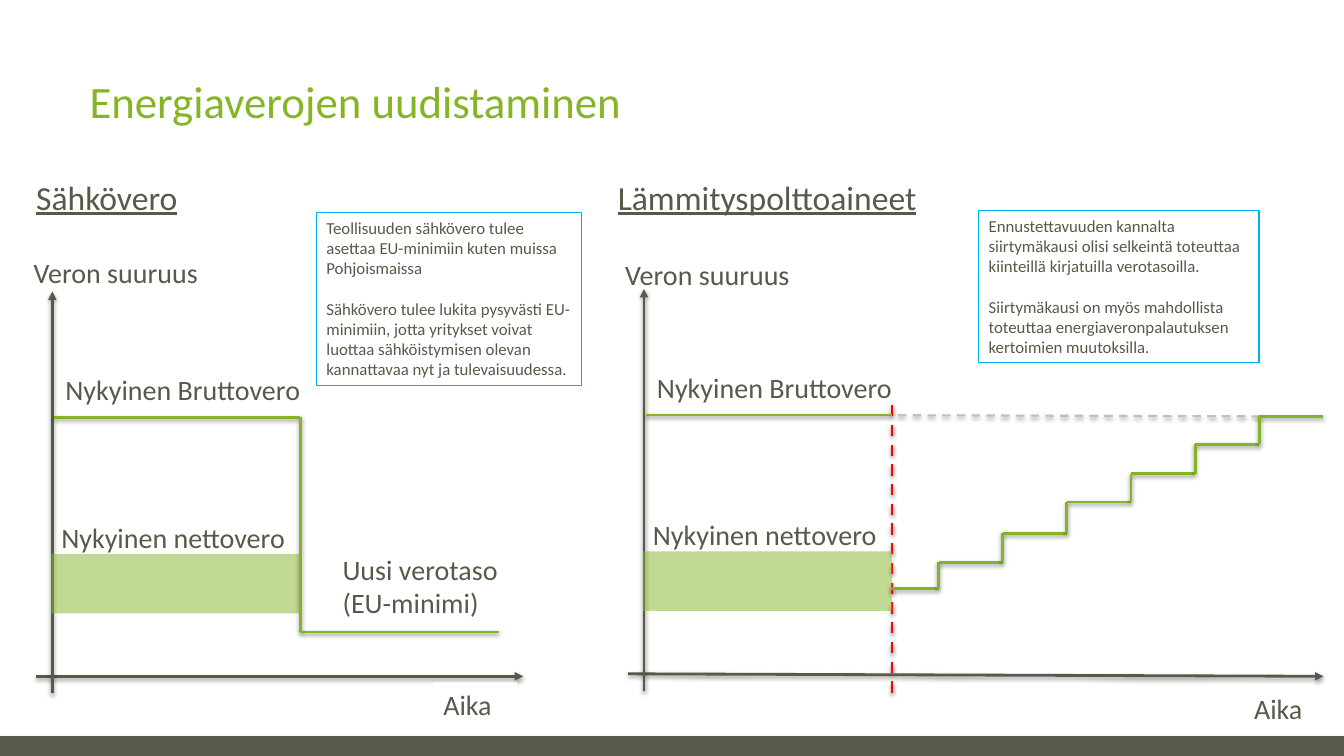
from dataclasses import dataclass

from lxml import etree
from pptx import Presentation
from pptx import slide as s
from pptx import util as u
from pptx.dml import color
from pptx.enum import dml, shapes, text
from pptx.oxml import ns


@dataclass(frozen=True)
class Theme:
    font: str = "Calibri"
    ink: str = "59594A"
    green: str = "85B526"
    red: str = "FF0000"
    blue: str = "00B0F0"
    grey: str = "C0C0B3"
    white: str = "FFFFFF"
    title: float = 32
    head: float = 24
    label: float = 20
    note: float = 12


T = Theme()


@dataclass(frozen=True)
class Line:
    x1: float
    y1: float
    x2: float
    y2: float
    tint: str = T.green
    width: float = 2
    dash: bool = False
    arrow: bool = False


@dataclass(frozen=True)
class Box:
    x: float
    y: float
    w: float
    h: float
    fill: str = ""
    edge: str = ""
    alpha: int = 100


@dataclass(frozen=True)
class Label:
    box: Box
    paras: tuple[str, ...]
    size: float = T.label
    tint: str = T.ink
    under: bool = False
    anchor: text.MSO_ANCHOR = text.MSO_ANCHOR.TOP
    pitch: float = 1.0


@dataclass(frozen=True)
class Panel:
    head: str
    head_x: float
    dx: float
    dy: float
    name_y: float
    end_x: float
    end_y: float


def rgb(tint: str) -> color.RGBColor:
    return color.RGBColor.from_string(tint)


def add_shade(props, alpha: int, dist: float) -> None:
    """Put a soft downward shadow on a shape."""
    tag = ns.qn("a:effectLst")
    effects = props.find(tag)
    if effects is None:
        effects = etree.SubElement(props, tag)
    shade = etree.SubElement(effects, ns.qn("a:outerShdw"), blurRad=str(u.Pt(3.1)),
                             dist=str(u.Pt(dist)), dir="5400000", rotWithShape="0")
    tint = etree.SubElement(shade, ns.qn("a:srgbClr"), val="000000")
    etree.SubElement(tint, ns.qn("a:alpha"), val=str(alpha * 1000))


def draw_line(page: s.Slide, item: Line) -> None:
    ends = [u.Pt(v) for v in (item.x1, item.y1, item.x2, item.y2)]
    link = page.shapes.add_connector(shapes.MSO_CONNECTOR.STRAIGHT, *ends)
    link.line.color.rgb = rgb(item.tint)
    link.line.width = u.Pt(item.width)
    if item.dash:
        link.line.dash_style = dml.MSO_LINE.DASH
    props = link._element.spPr
    if item.arrow:
        etree.SubElement(props.find(ns.qn("a:ln")), ns.qn("a:tailEnd"), type="triangle")
    add_shade(props, 38, 1.6)


def draw_box(page: s.Slide, box: Box):
    frame = [u.Pt(v) for v in (box.x, box.y, box.w, box.h)]
    shape = page.shapes.add_shape(shapes.MSO_SHAPE.RECTANGLE, *frame)
    shape.shadow.inherit = False
    if box.fill:
        shape.fill.solid()
        shape.fill.fore_color.rgb = rgb(box.fill)
        if box.alpha < 100:
            tint = shape._element.spPr.find(ns.qn("a:solidFill"))[0]
            etree.SubElement(tint, ns.qn("a:alpha"), val=str(box.alpha * 1000))
    else:
        shape.fill.background()
    if box.edge:
        shape.line.color.rgb = rgb(box.edge)
        shape.line.width = u.Pt(0.75)
    else:
        shape.line.fill.background()
    return shape


def draw_label(page: s.Slide, item: Label) -> None:
    box = item.box
    if box.fill or box.edge:
        shape = draw_box(page, box)
    else:
        shape = page.shapes.add_textbox(*[u.Pt(v) for v in (box.x, box.y, box.w, box.h)])
    frame = shape.text_frame
    frame.word_wrap = True
    frame.vertical_anchor = item.anchor
    for i, words in enumerate(item.paras):
        para = frame.paragraphs[0] if i == 0 else frame.add_paragraph()
        para.alignment = text.PP_ALIGN.LEFT
        para.line_spacing = item.pitch
        if i:
            para.space_before = u.Pt(14.6)
        run = para.add_run()
        run.text = words
        run.font.name = T.font
        run.font.size = u.Pt(item.size)
        run.font.color.rgb = rgb(item.tint)
        if item.under:
            run.font.underline = True


def draw_panel(page: s.Slide, panel: Panel) -> None:
    """Heading, axes, gross level and net band shared by both charts."""
    dx, dy = panel.dx, panel.dy
    draw_label(page, Label(Box(panel.head_x, 108, 408, 50.4), (panel.head,), T.head,
                           under=True, anchor=text.MSO_ANCHOR.BOTTOM))
    draw_line(page, Line(25.9 + dx, 483.1 + dy, panel.end_x, panel.end_y, T.ink, arrow=True))
    draw_line(page, Line(37.4 + dx, 495.2 + dy, 37.4 + dx, 208.2 + dy, T.ink, arrow=True))
    draw_line(page, Line(38.9 + dx, 298.2 + dy, 214.6 + dx, 298.2 + dy))
    draw_label(page, Label(Box(16.9 + dx, panel.name_y, 134, 31.7), ("Veron suuruus",)))
    draw_label(page, Label(Box(39.6 + dx, 262.7 + dy, 209.5, 31.7), ("Nykyinen Bruttovero",)))
    draw_label(page, Label(Box(36.7 + dx, 368 + dy, 177.1, 31.7), ("Nykyinen nettovero",)))
    draw_box(page, Box(36.7 + dx, 395.7 + dy, 177.8, 42.5, T.green, alpha=50))


def draw_steps(page: s.Slide) -> None:
    """Staircase from the net band up to the gross level."""
    levels = (420.5, 401.8, 380.9, 358.6, 338.4, 317.5, 297.4)
    edges = [635.8] + [670.4 + 45.83 * i for i in range(len(levels))]
    for i, y in enumerate(levels):
        draw_line(page, Line(edges[i], y, edges[i + 1], y))
        if i:
            draw_line(page, Line(edges[i], levels[i - 1], edges[i], y))


PANELS = (
    Panel("Sähkövero", 18.7, 0, 0, 179.3, 373.7, 483.1),
    Panel("Lämmityspolttoaineet", 434.2, 422.6, -1.8, 180.7, 945.4, 483.1),
)
CUT = Line(637.2, 289.4, 637.2, 500.4, T.red, dash=True)
LINES = (
    # Drop to the new electricity tax level
    Line(214.6, 451.4, 214.6, 298.1),
    Line(214.6, 451.4, 356.4, 451.4),
    # Gross level carried forward
    Line(641.5, 296.6, 899.3, 297.4, T.grey, 1.5, dash=True),
)
LABELS = (
    Label(Box(56.9, 30.2, 746.6, 90), ("Energiaverojen uudistaminen",), T.title, T.green,
          anchor=text.MSO_ANCHOR.MIDDLE, pitch=0.8),
    Label(Box(237.6, 391, 154.1, 55.4), ("Uusi verotaso (EU-minimi)",)),
    Label(Box(309.6, 487.4, 59.8, 31.7, T.white), ("Aika",)),
    Label(Box(888.7, 490.3, 61, 31.7), ("Aika",)),
    Label(Box(226.1, 151.9, 189.4, 123.8, edge=T.blue), (
        "Teollisuuden sähkövero tulee asettaa EU-minimiin kuten muissa Pohjoismaissa",
        "Sähkövero tulee lukita pysyvästi EU-minimiin, jotta yritykset voivat luottaa "
        "sähköistymisen olevan kannattavaa nyt ja tulevaisuudessa."), T.note),
    Label(Box(699.1, 150.5, 200.2, 108.7, edge=T.blue), (
        "Ennustettavuuden kannalta siirtymäkausi olisi selkeintä toteuttaa kiinteillä "
        "kirjatuilla verotasoilla.",
        "Siirtymäkausi on myös mahdollista toteuttaa energiaveronpalautuksen kertoimien "
        "muutoksilla."), T.note),
)


def main() -> None:
    deck = Presentation()
    deck.slide_width, deck.slide_height = u.Pt(960), u.Pt(540)
    page = deck.slides.add_slide(deck.slide_layouts[6])
    # Footer bar
    bar = draw_box(page, Box(0, 526.3, 961, 14.4, T.ink, T.ink))
    add_shade(bar._element.spPr, 35, 1.8)
    # Charts
    draw_line(page, CUT)
    for panel in PANELS:
        draw_panel(page, panel)
    for item in LINES:
        draw_line(page, item)
    draw_steps(page)
    # Title, labels and notes
    for label in LABELS:
        draw_label(page, label)
    deck.save("out.pptx")


if __name__ == "__main__":
    main()
